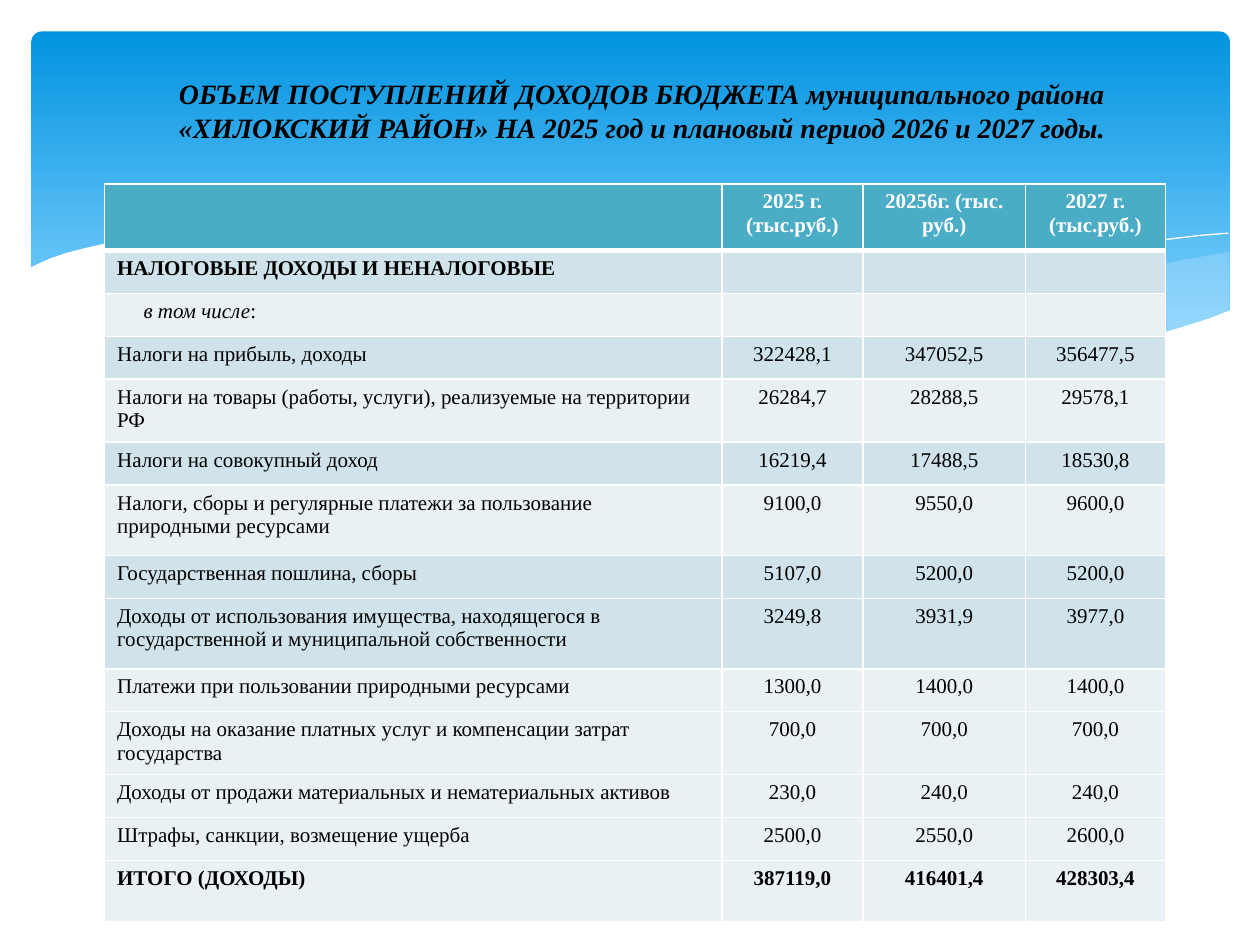
from pptx import Presentation
from pptx.dml.color import RGBColor
from pptx.enum.shapes import MSO_SHAPE
from pptx.enum.text import MSO_ANCHOR, PP_ALIGN
from pptx.oxml.ns import qn
from pptx.util import Inches, Pt
from lxml.etree import SubElement

ROUND = MSO_SHAPE.ROUNDED_RECTANGLE
MIDDLE = MSO_ANCHOR.MIDDLE
LEFT, CENTER = PP_ALIGN.LEFT, PP_ALIGN.CENTER

COLS, ROWS = 100, 75
HEX = {"white": "FFFFFF", "black": "000000", "top": "0293E0", "low": "83D3FE",
       "wave": "C6E7FC", "head": "4BACC6", "dark": "D0E3EA", "light": "E9F1F5"}

TITLE = ("ОБЪЕМ ПОСТУПЛЕНИЙ ДОХОДОВ БЮДЖЕТА муниципального района "
         "«ХИЛОКСКИЙ РАЙОН» НА 2025 год и плановый период 2026 и 2027 годы.")
NONE = ("", "", "")
# Row height, fill, label, values
DATA = [
    (5.3, "head", "", ("2025 г. (тыс.руб.)", "20256г. (тыс. руб.)", "2027 г. (тыс.руб.)")),
    (3.4, "dark", "НАЛОГОВЫЕ ДОХОДЫ И НЕНАЛОГОВЫЕ", NONE),
    (3.4, "light", "в том числе:", NONE),
    (3.4, "dark", "Налоги на прибыль, доходы", ("322428,1", "347052,5", "356477,5")),
    (4.9, "light", "Налоги на товары (работы, услуги), реализуемые на территории РФ",
     ("26284,7", "28288,5", "29578,1")),
    (3.4, "dark", "Налоги на совокупный доход", ("16219,4", "17488,5", "18530,8")),
    (5.6, "light", "Налоги, сборы и регулярные платежи за пользование природными ресурсами",
     ("9100,0", "9550,0", "9600,0")),
    (3.4, "dark", "Государственная пошлина, сборы", ("5107,0", "5200,0", "5200,0")),
    (5.6, "dark", "Доходы от использования имущества, находящегося в государственной "
     "и муниципальной собственности", ("3249,8", "3931,9", "3977,0")),
    (3.4, "light", "Платежи при пользовании природными ресурсами",
     ("1300,0", "1400,0", "1400,0")),
    (4.9, "light", "Доходы на оказание платных услуг и компенсации затрат государства",
     ("700,0", "700,0", "700,0")),
    (3.4, "light", "Доходы от продажи материальных и нематериальных активов",
     ("230,0", "240,0", "240,0")),
    (3.4, "light", "Штрафы, санкции, возмещение ущерба", ("2500,0", "2550,0", "2600,0")),
    (4.9, "light", "ИТОГО (ДОХОДЫ)", ("387119,0", "416401,4", "428303,4")),
]
WIDTHS = (49, 11.2, 12.9, 11.1)
SUBHEAD = 2
BOLD = (0, 1, len(DATA) - 1)

RIGHT = [(97.5, 20), (93.5, 20.7), (89.1, 21.6), (86.1, 22.3), (80.5, 23.7), (75.3, 24.8),
         (70.6, 25.7), (66.1, 26.5), (70.5, 27.1), (74.5, 27.5), (78.1, 27.7), (81.4, 27.8),
         (85.4, 27.6), (88.9, 27.2), (92.1, 26.5), (94.9, 25.7), (97.6, 24.7), (97.6, 20)]
SWELL = [(89.3, 27.3), (83.7, 26.5), (77.5, 25.4), (70.6, 24), (62.9, 22.2), (58.4, 21.1),
         (54.1, 20.3), (50.2, 19.6), (44.2, 18.9), (38, 18.5), (34.4, 18.6), (28.6, 19.1),
         (34.2, 19.9), (40.4, 21.1), (44.9, 22.2), (53, 24), (60.1, 25.5), (66.5, 26.6),
         (72.2, 27.4), (77.3, 27.7), (81.8, 27.8), (85.7, 27.7)]
CREST = [(30.9, 19.5), (34.4, 19), (38.7, 18.7), (43.3, 18.7), (48.9, 19), (55.6, 19.7),
         (63.6, 20.8), (72.7, 22.6), (83.1, 25.1), (90.7, 27.2)]
RISE = [(61.3, 25.7), (67.2, 24.1), (74.8, 22.3), (80.6, 21), (86.6, 19.9), (91, 19.2),
        (95.1, 18.7), (97.5, 18.5)]
BASE = [(97.7, 24.6), (95.9, 25.3), (94, 25.9), (92, 26.5), (89.9, 26.9), (87.5, 27.3),
        (83.7, 27.6), (80.9, 27.7), (76.1, 27.5), (70.8, 27), (64.8, 26.2), (57.9, 25),
        (50.3, 23.3), (44.7, 22), (39.1, 20.7), (34, 19.7), (29.2, 19), (25, 18.6),
        (21.1, 18.4), (16.1, 18.4), (13.2, 18.6), (10.6, 18.9), (8.5, 19.3), (6.7, 19.7),
        (5.2, 20.1), (4, 20.5), (2.9, 21), (2.3, 21.3), (2.3, 32.9), (97.7, 32.9)]


def tint(name):
    return RGBColor.from_string(HEX[name])


class Deck:
    font = "Times New Roman"

    def __init__(self):
        self.prs = Presentation()
        self.prs.slide_width, self.prs.slide_height = Inches(10), Inches(7.5)
        self.slide = self.prs.slides.add_slide(self.prs.slide_layouts[6])
        self.shapes = self.slide.shapes

    def x(self, cols):
        return round(self.prs.slide_width * cols / COLS)

    def y(self, rows):
        return round(self.prs.slide_height * rows / ROWS)

    def box(self, left, top, width, height):
        return self.x(left), self.y(top), self.x(width), self.y(height)

    def panel(self, place, bend):
        """Round box with a fade from top to bottom."""
        shape = self.shapes.add_shape(ROUND, *self.box(*place))
        shape.adjustments[0] = bend
        shape.shadow.inherit = False
        shape.line.fill.background()
        shape.fill.gradient()
        shape.fill.gradient_angle = 270
        for stop, name, spot in zip(shape.fill.gradient_stops, ("top", "low"), (0, 0.9)):
            stop.color.rgb = tint(name)
            stop.position = spot

    def curve(self, points, fill=None, alpha=100):
        """Closed area when a fill is given, else a thin white line."""
        spots = [(self.x(a), self.y(b)) for a, b in points]
        pen = self.shapes.build_freeform(*spots[0])
        pen.add_line_segments(spots[1:], close=bool(fill))
        shape = pen.convert_to_shape()
        shape.shadow.inherit = False
        if not fill:
            shape.fill.background()
            shape.line.color.rgb = tint("white")
            shape.line.width = Pt(0)
            return
        shape.line.fill.background()
        shape.fill.solid()
        shape.fill.fore_color.rgb = tint(fill)
        if alpha < 100:
            color = shape._element.spPr.find(".//" + qn("a:srgbClr"))
            SubElement(color, qn("a:alpha"), val=str(alpha * 1000))

    def style(self, para, size, color="black", bold=False, italic=False, align=CENTER):
        para.alignment = align
        for run in para.runs:
            font = run.font
            font.name, font.size = self.font, Pt(size)
            font.bold, font.italic = bold, italic
            font.color.rgb = tint(color)
        if not para.runs:
            SubElement(para._p, qn("a:endParaRPr"), sz=str(size * 100))

    def title(self, text, place):
        frame = self.shapes.add_textbox(*self.box(*place)).text_frame
        frame.word_wrap = True
        frame.vertical_anchor = MIDDLE
        frame.margin_top, frame.margin_bottom = 0, self.y(2.4)
        frame.text = text
        self.style(frame.paragraphs[0], 16, bold=True, italic=True)

    def edge(self, cell, top, bottom):
        """White cell borders; top and bottom are widths in points."""
        props = cell._tc.get_or_add_tcPr()
        for side, width in zip("LRTB", (1, 1, top, bottom)):
            line = SubElement(props, qn("a:ln" + side), w=str(Pt(width)))
            fill = SubElement(line, qn("a:solidFill"))
            SubElement(fill, qn("a:srgbClr"), val=HEX["white"])

    def table(self, data, widths, left, top):
        high = sum(row[0] for row in data)
        place = self.box(left, top, sum(widths), high)
        grid = self.shapes.add_table(len(data), len(widths), *place).table
        for col, width in zip(grid.columns, widths):
            col.width = self.x(width)
        for i, (tall, fill, label, values) in enumerate(data):
            grid.rows[i].height = self.y(tall)
            for j, text in enumerate((label, *values)):
                cell = grid.cell(i, j)
                self.edge(cell, 3 if i == 1 else 1, 1 if i else 3)
                cell.fill.solid()
                cell.fill.fore_color.rgb = tint(fill)
                cell.text_frame.text = text
                self.style(cell.text_frame.paragraphs[0], 12, "black" if i else "white",
                           bold=i in BOLD, align=CENTER if j else LEFT)
        return grid

    def subhead(self, cell):
        """Indent the text and slant all but its closing colon."""
        para = cell.text_frame.paragraphs[0]
        words = para.runs[0].text
        para.runs[0].text = words[:-1]
        para.add_run().text = words[-1]
        self.style(para, 12, align=LEFT)
        para.runs[0].font.italic = True
        para._p.get_or_add_pPr().set("marL", str(self.x(2.1)))


def main():
    deck = Deck()
    deck.panel((2.5, 2.5, 95.1, 27), 0.03)
    deck.curve(RIGHT, "wave", 29)
    deck.curve(SWELL, "wave", 40)
    deck.curve(CREST)
    deck.curve(RISE)
    deck.curve(BASE, "white")
    deck.title(TITLE, (9.1, 6.8, 83.7, 6.3))
    grid = deck.table(DATA, WIDTHS, 8.3, 14.6)
    deck.subhead(grid.cell(SUBHEAD, 0))
    deck.prs.save("out.pptx")


if __name__ == "__main__":
    main()
